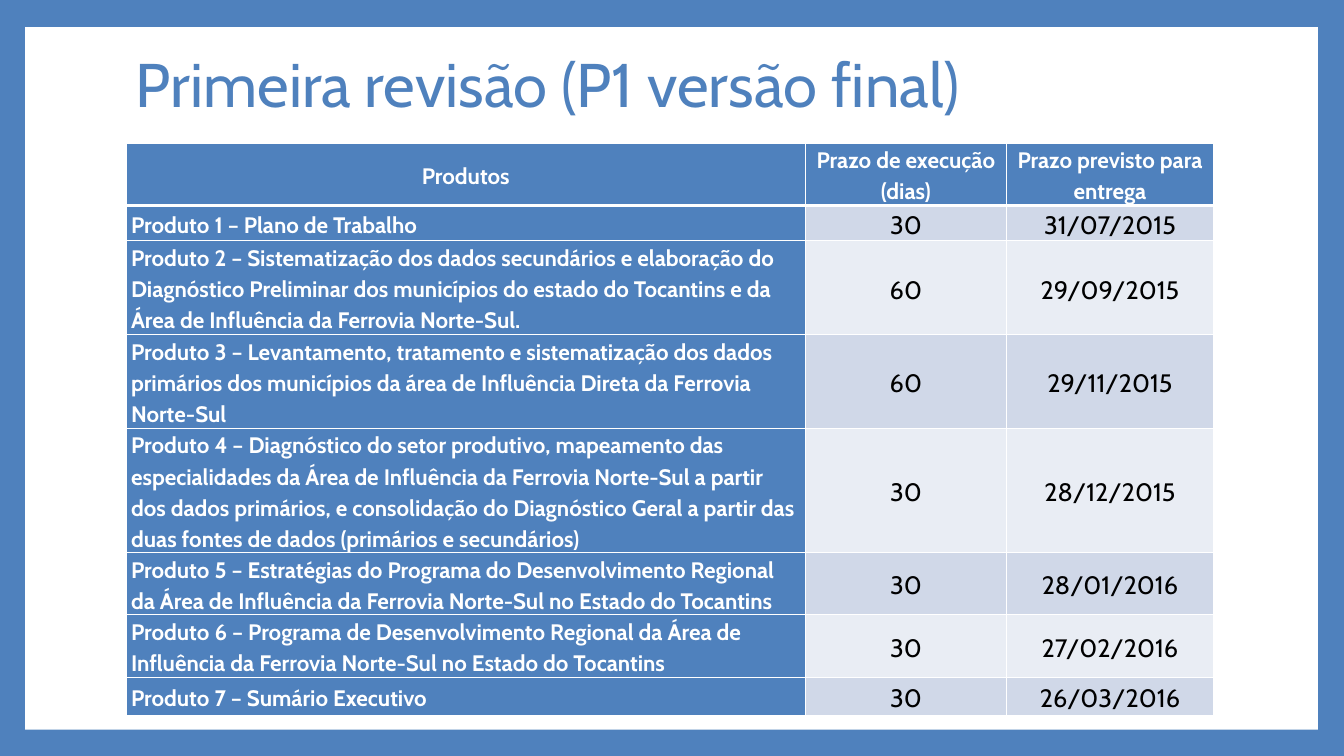
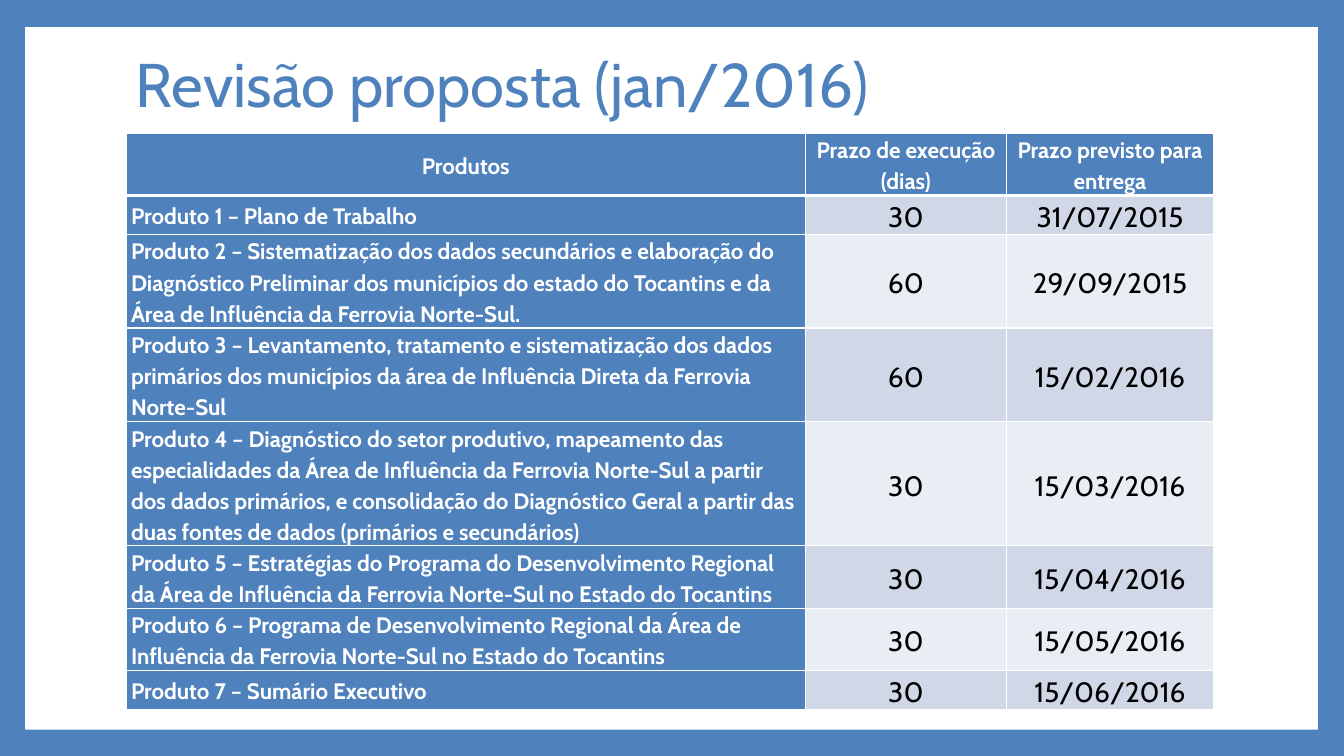
from lxml import etree
from pptx import Presentation
from pptx.dml.color import RGBColor
from pptx.enum.shapes import MSO_SHAPE
from pptx.enum.text import MSO_ANCHOR, PP_ALIGN
from pptx.oxml.ns import qn
from pptx.util import Inches, Pt

RECT = MSO_SHAPE.RECTANGLE
MIDDLE = MSO_ANCHOR.MIDDLE
LEFT, CENTER = PP_ALIGN.LEFT, PP_ALIGN.CENTER

COLORS = {
    "blue": "4F81BD",
    "white": "FFFFFF",
    "black": "000000",
    "dark": "D0D8E8",
    "light": "E9EDF4",
}
FONT = "Cabin"
MARGIN, WIDTH = 1.25, 10.8
COLS = [6.74, 1.99, 2.06]
ROWS = [0.62, 0.35, 0.93, 0.93, 1.23, 0.62, 0.62, 0.38]

HEADS = ["Produtos", "Prazo de execução (dias)", "Prazo previsto para entrega"]
ITEMS = [
    ("Produto 1 – Plano de Trabalho", "30"),
    ("Produto 2 – Sistematização dos dados secundários e elaboração do "
     "Diagnóstico Preliminar dos municípios do estado do Tocantins e da "
     "Área de Influência da Ferrovia Norte-Sul.", "60"),
    ("Produto 3 – Levantamento, tratamento e sistematização dos dados "
     "primários dos municípios da área de Influência Direta da Ferrovia "
     "Norte-Sul", "60"),
    ("Produto 4 – Diagnóstico do setor produtivo, mapeamento das "
     "especialidades da Área de Influência da Ferrovia Norte-Sul a partir "
     "dos dados primários, e consolidação do Diagnóstico Geral a partir das "
     "duas fontes de dados (primários e secundários)", "30"),
    ("Produto 5 – Estratégias do Programa do Desenvolvimento Regional "
     "da Área de Influência da Ferrovia Norte-Sul no Estado do Tocantins", "30"),
    ("Produto 6 – Programa de Desenvolvimento Regional da Área de "
     "Influência da Ferrovia Norte-Sul no Estado do Tocantins", "30"),
    ("Produto 7 – Sumário Executivo", "30"),
]
# Title, table top, size of the figures, delivery dates
PLANS = [
    ("Primeira revisão (P1 versão final)", 1.42, 18,
     ["31/07/2015", "29/09/2015", "29/11/2015", "28/12/2015",
      "28/01/2016", "27/02/2016", "26/03/2016"]),
    ("Revisão proposta (jan/2016)", 1.32, 20,
     ["31/07/2015", "29/09/2015", "15/02/2016", "15/03/2016",
      "15/04/2016", "15/05/2016", "15/06/2016"]),
]


def paint(fill, color):
    fill.solid()
    fill.fore_color.rgb = RGBColor.from_string(COLORS[color])


def edge(cell, side, points):
    """Draw a white border on one side (L, R, T or B) of a cell."""
    line = etree.SubElement(cell._tc.get_or_add_tcPr(), qn(f"a:ln{side}"),
                            w=str(Pt(points)))
    fill = etree.SubElement(line, qn("a:solidFill"))
    etree.SubElement(fill, qn("a:srgbClr"), val=COLORS["white"])


class Deck:
    def __init__(self):
        self.prs = Presentation()
        self.prs.slide_width = Inches(13.33)
        self.prs.slide_height = Inches(7.5)
        self.slide = None

    def page(self, title):
        """Start a slide with its blue frame and title."""
        self.slide = self.prs.slides.add_slide(self.prs.slide_layouts[6])
        paint(self.slide.background.fill, "blue")
        panel = self.slide.shapes.add_shape(
            RECT, Inches(0.25), Inches(0.27), Inches(12.82), Inches(6.97))
        panel.shadow.inherit = False
        paint(panel.fill, "white")
        panel.line.fill.background()
        box = self.slide.shapes.add_textbox(
            Inches(MARGIN), Inches(0.48), Inches(WIDTH), Inches(0.78))
        frame = box.text_frame
        frame.word_wrap = True
        frame.vertical_anchor = MIDDLE
        self.text(frame, title, 44, "blue", spacing=0.9)

    def text(self, frame, words, size, color, bold=False, align=LEFT, spacing=1.15):
        frame.text = words
        para = frame.paragraphs[0]
        para.alignment = align
        para.line_spacing = spacing
        font = para.runs[0].font
        font.name, font.size, font.bold = FONT, Pt(size), bold
        font.color.rgb = RGBColor.from_string(COLORS[color])

    def cell(self, cell, row, col, words, size):
        head = row == 0
        label = head or col == 0
        cell.margin_left = cell.margin_right = Inches(0.05)
        cell.margin_top = cell.margin_bottom = 0
        cell.vertical_anchor = MIDDLE
        edge(cell, "L", 1)
        edge(cell, "R", 1)
        edge(cell, "T", 3 if row == 1 else 1)
        edge(cell, "B", 3 if head else 1)
        band = "dark" if row % 2 else "light"
        paint(cell.fill, "blue" if label else band)
        self.text(cell.text_frame, words, 16 if label else size,
                  "white" if label else "black", label,
                  CENTER if head or col else LEFT)

    def table(self, top, size, data):
        table = self.slide.shapes.add_table(
            len(ROWS), len(COLS), Inches(MARGIN), Inches(top),
            Inches(WIDTH), Inches(sum(ROWS))).table
        table.horz_banding = False
        for col, width in zip(table.columns, COLS):
            col.width = Inches(width)
        for row, height in zip(table.rows, ROWS):
            row.height = Inches(height)
        for r, line in enumerate(data):
            for c, words in enumerate(line):
                self.cell(table.cell(r, c), r, c, words, size)


def main():
    deck = Deck()
    for title, top, size, dates in PLANS:
        deck.page(title)
        rows = [(*item, date) for item, date in zip(ITEMS, dates)]
        deck.table(top, size, [HEADS, *rows])
    deck.prs.save("out.pptx")


if __name__ == "__main__":
    main()
